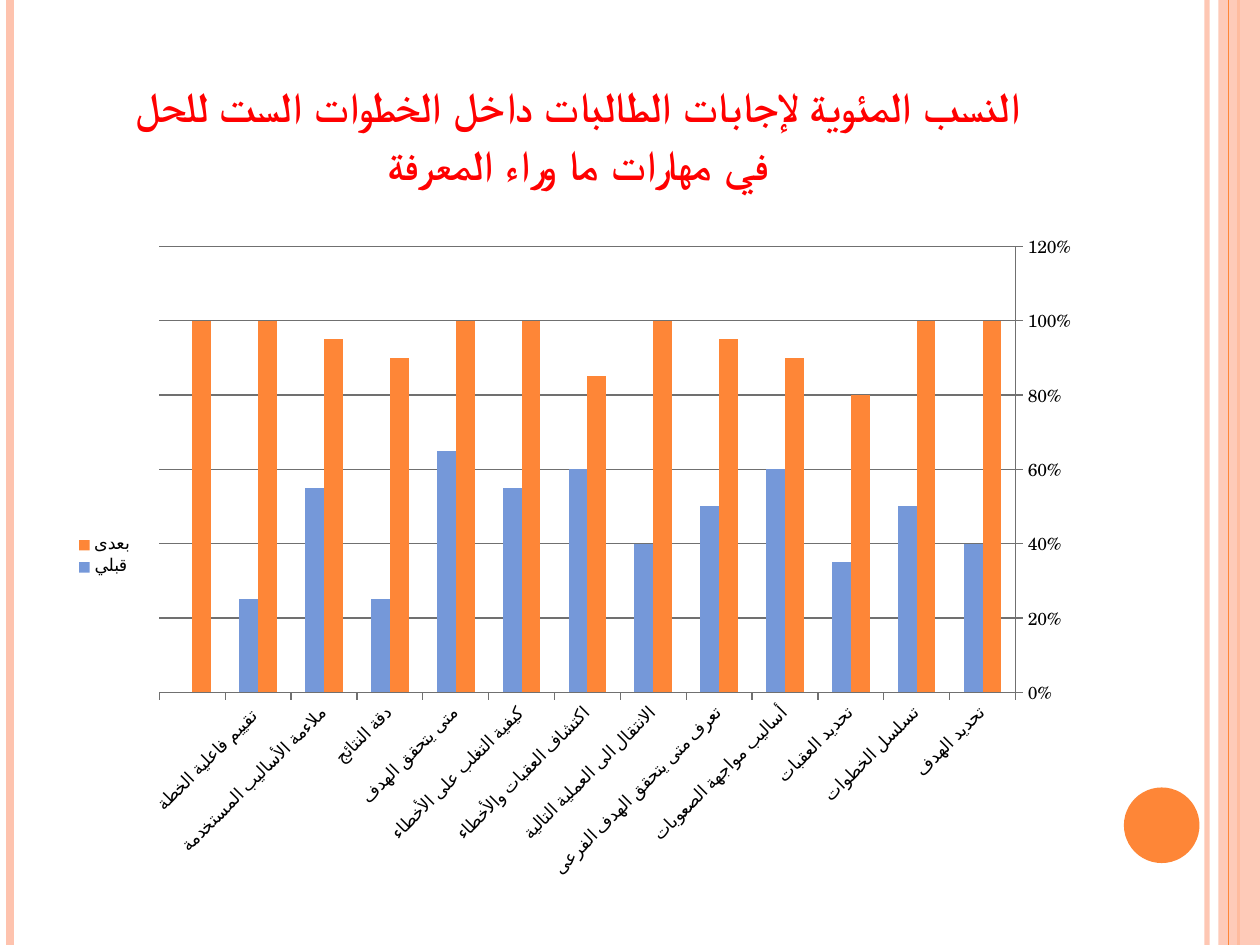
from dataclasses import dataclass

from lxml import etree
from pptx import Presentation, util as u
from pptx.chart.data import CategoryChartData
from pptx.dml.color import RGBColor
from pptx.enum import chart as ch, shapes, text
from pptx.oxml import ns


@dataclass(frozen=True)
class Theme:
    accent: str = "FE8637"
    second: str = "7598D9"
    pale: str = "FEC3AE"
    title: str = "FF0000"
    ink: str = "000000"
    axis: str = "707070"
    title_font: str = "Times New Roman"
    body_font: str = "TeX Gyre Schola"
    title_size: int = 24
    body_size: int = 10


COLS, ROWS = 100, 75  # grid of tenths of an inch


class SlideBuilder:
    def __init__(self, prs, theme):
        self.prs, self.theme = prs, theme
        self.s = prs.slides.add_slide(prs.slide_layouts[6])

    def x(self, cols):
        return int(self.prs.slide_width * cols / COLS)

    def y(self, rows):
        return int(self.prs.slide_height * rows / ROWS)

    def box(self, left, top, width, height):
        return self.x(left), self.y(top), self.x(width), self.y(height)

    @staticmethod
    def fade(sp, percent):
        for clr in sp._element.spPr.iter(ns.qn("a:srgbClr")):
            etree.SubElement(clr, ns.qn("a:alpha"), val=str(percent * 1000))

    @staticmethod
    def style(obj, values):
        for name, value in values.items():
            setattr(obj, name, value)

    @staticmethod
    def color_line(line, color, width=0.75):
        line.color.rgb = RGBColor.from_string(color)
        line.width = u.Pt(width)

    def rule(self, col, color, width, opacity=100):
        sp = self.s.shapes.add_connector(
            shapes.MSO_CONNECTOR.STRAIGHT, self.x(col), 0, self.x(col), self.y(ROWS))
        self.color_line(sp.line, color, width)
        etree.SubElement(sp._element.spPr, ns.qn("a:effectLst"))
        self.fade(sp, opacity)

    def shape(self, kind, area, color, opacity=100):
        sp = self.s.shapes.add_shape(kind, *self.box(*area))
        sp.shadow.inherit = False
        sp.fill.solid()
        sp.fill.fore_color.rgb = RGBColor.from_string(color)
        sp.line.fill.background()
        self.fade(sp, opacity)

    def title(self, area, lines):
        t = self.theme
        tf = self.s.shapes.add_textbox(*self.box(*area)).text_frame
        self.style(tf, {"word_wrap": True,
                        "vertical_anchor": text.MSO_ANCHOR.BOTTOM})
        p = tf.paragraphs[0]
        self.style(p, {"alignment": text.PP_ALIGN.CENTER, "line_spacing": 1.15})
        p._p.get_or_add_pPr().set("rtl", "1")
        for i, line in enumerate(lines):
            if i:
                p.add_line_break()
            r = p.add_run()
            r.text = line
            self.style(r.font, {"size": u.Pt(t.title_size), "bold": True,
                                "name": t.title_font})
            r.font.color.rgb = RGBColor.from_string(t.title)
            etree.SubElement(r._r.get_or_add_rPr(), ns.qn("a:cs"),
                             typeface=t.body_font)

    def column_chart(self, area, cats, series, plot_area):
        t = self.theme
        data = CategoryChartData(number_format="0%")
        data.categories = cats
        for name, values, _ in series:
            data.add_series(name, values)
        chart = self.s.shapes.add_chart(
            ch.XL_CHART_TYPE.COLUMN_CLUSTERED, *self.box(*area), data).chart
        self.style(chart, {"has_title": False, "has_legend": True})
        self.style(chart.font, {"size": u.Pt(t.body_size), "name": t.body_font})
        chart.font.color.rgb = RGBColor.from_string(t.ink)
        self.style(chart.legend, {"position": ch.XL_LEGEND_POSITION.LEFT,
                                  "include_in_layout": False})

        # Columns
        plot = chart.plots[0]
        self.style(plot, {"gap_width": 150, "overlap": 0,
                          "vary_by_categories": False})
        for ser, (_, _, color) in zip(plot.series, series):
            ser.format.fill.solid()
            ser.format.fill.fore_color.rgb = RGBColor.from_string(color)

        # Axes: categories run from right to left
        cat, val = chart.category_axis, chart.value_axis
        self.style(cat, {"reverse_order": True})
        self.style(val, {"minimum_scale": 0, "maximum_scale": 1.2,
                         "major_unit": 0.2, "has_major_gridlines": True})
        self.style(val.tick_labels, {"number_format": "0%",
                                     "number_format_is_linked": False})
        for axis in (cat, val):
            axis.major_tick_mark = ch.XL_TICK_MARK.OUTSIDE
            self.color_line(axis.format.line, t.axis)
        self.color_line(val.major_gridlines.format.line, t.axis)
        cat.tick_labels.font.size = u.Pt(t.body_size)
        cat._element.find(ns.qn("c:txPr")).find(ns.qn("a:bodyPr")).set("rot", "-2700000")

        # Inner plot area, from grid cells to shares of the chart
        left, top, width, height = area
        px, py, pw, ph = plot_area
        shares = {"x": (px - left) / width, "y": (py - top) / height,
                  "w": pw / width, "h": ph / height}
        area_xml = chart._chartSpace.chart.plotArea
        for old in area_xml.findall(ns.qn("c:layout")):
            area_xml.remove(old)
        layout = etree.Element(ns.qn("c:layout"))
        manual = etree.SubElement(layout, ns.qn("c:manualLayout"))
        settings = {"layoutTarget": "inner", "xMode": "edge", "yMode": "edge",
                    **shares}
        for tag, value in settings.items():
            etree.SubElement(manual, ns.qn(f"c:{tag}"), val=str(value))
        area_xml.insert(0, layout)


CATEGORIES = [
    "تحديد الهدف", "تسلسل الخطوات", "تحديد العقبات", "أساليب مواجهة الصعوبات",
    "تعرف متى يتحقق الهدف الفرعى", "الانتقال الى العملية التالية",
    "اكتشاف العقبات والأخطاء", "كيفية التغلب على الأخطاء", "متى يتحقق الهدف",
    "دقة النتائج", "ملاءمة الأساليب المستخدمة", "تقييم فاعلية الخطة ", "",
]
AFTER = [1, 1, 0.8, 0.9, 0.95, 1, 0.85, 1, 1, 0.9, 0.95, 1, 1]
BEFORE = [0.4, 0.5, 0.35, 0.6, 0.5, 0.4, 0.6, 0.55, 0.65, 0.25, 0.55, 0.25, None]


def main():
    prs = Presentation()
    prs.slide_width, prs.slide_height = u.Inches(10), u.Inches(7.5)
    t = Theme()
    b = SlideBuilder(prs, t)

    # Side stripes and disc
    b.rule(95.8, t.pale, 3, 93)
    b.rule(0.8, t.pale, 4.5)
    b.rule(98.3, t.accent, 1.5)
    b.shape(shapes.MSO_SHAPE.RECTANGLE, (96.7, 0, 3.3, ROWS), t.pale, 87)
    b.rule(97.5, t.accent, 0.75)
    b.shape(shapes.MSO_SHAPE.OVAL, (89.2, 62.5, 6, 6), t.accent)

    # Title
    b.title((5, 3, 81.7, 12.5),
            ["النسب المئوية لإجابات الطالبات داخل الخطوات الست للحل",
             "في مهارات ما وراء المعرفة"])

    # Answers after and before, by skill
    b.column_chart((5, 17.5, 81.7, 53.3), CATEGORIES,
                   [("بعدى", AFTER, t.accent), ("قبلي", BEFORE, t.second)],
                   plot_area=(12.65, 19.55, 67.95, 35.4))
    prs.save("out.pptx")


if __name__ == "__main__":
    main()
